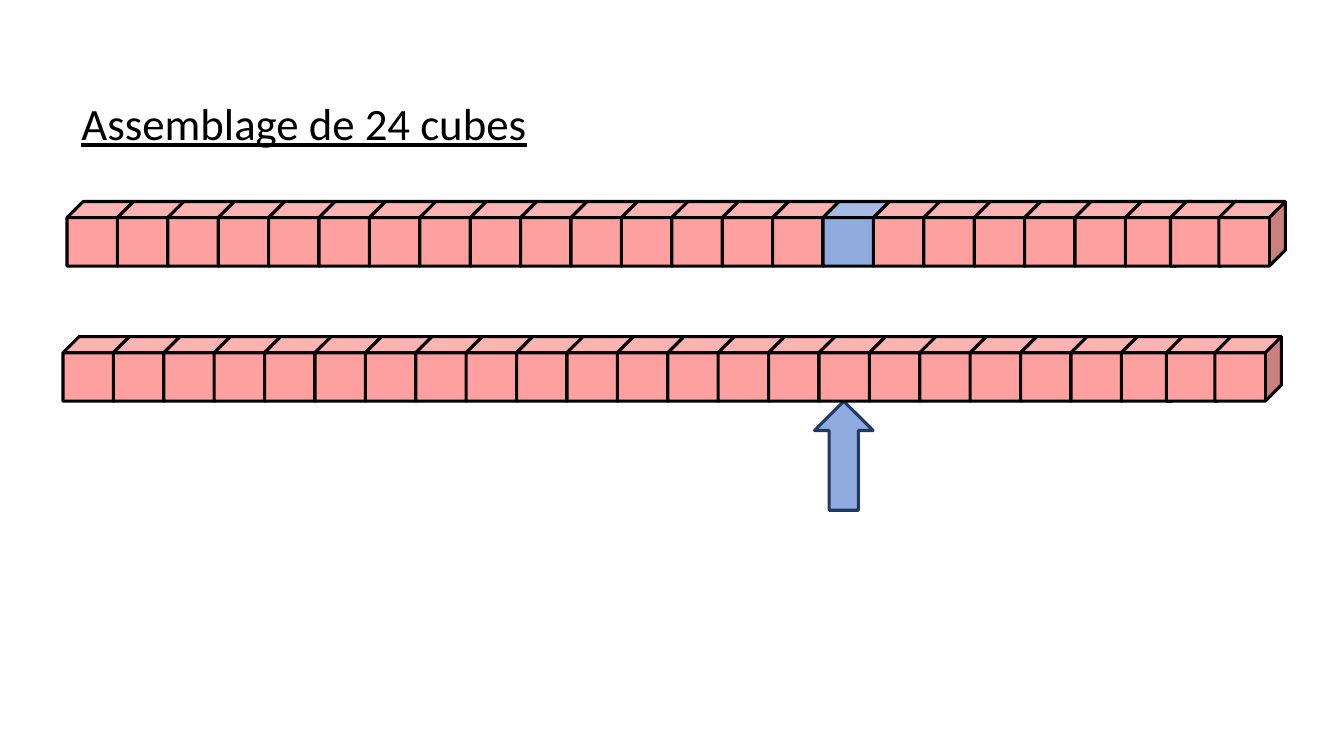
import pptx
import pptx.util
import pptx.dml.color
import pptx.enum.shapes
import pptx.enum.text

Pt = pptx.util.Pt
Shape = pptx.enum.shapes.MSO_SHAPE

PINK = "FEA0A0"
BLUE = "8FAADC"
BLACK = "000000"
NAVY = "203864"

CUBE_SIZE = (47.5, 46.1)
CUBE_OFFSETS = [36 * index for index in range(22)] + [788.2, 822.8]


def color(value):
    return pptx.dml.color.RGBColor.from_string(value)


class CubeSlide:
    title_format = {"name": "Calibri", "size": Pt(32), "underline": True}
    line_width = 2.25

    def __init__(self, presentation):
        self.slide = presentation.slides.add_slide(presentation.slide_layouts[6])

    def title(self, text, left, top, width, height):
        box = self.slide.shapes.add_textbox(Pt(left), Pt(top), Pt(width), Pt(height))
        box.text_frame.word_wrap = True
        box.text_frame.auto_size = pptx.enum.text.MSO_AUTO_SIZE.SHAPE_TO_FIT_TEXT
        run = box.text_frame.paragraphs[0].add_run()
        run.text = text
        run.font.color.rgb = color(BLACK)
        for name, value in self.title_format.items():
            setattr(run.font, name, value)

    def shape(self, shapes, kind, left, top, width, height, fill, line):
        shape = shapes.add_shape(kind, Pt(left), Pt(top), Pt(width), Pt(height))
        shape.shadow.inherit = False
        shape.fill.solid()
        shape.fill.fore_color.rgb = color(fill)
        shape.line.color.rgb = color(line)
        shape.line.width = Pt(self.line_width)

    def arrow(self, left, top, width, height):
        self.shape(self.slide.shapes, Shape.UP_ARROW, left, top, width, height, BLUE, NAVY)

    def cube_row(self, left, top, blue_index=None):
        group = self.slide.shapes.add_group_shape()
        for index, offset in enumerate(CUBE_OFFSETS):
            fill = BLUE if index == blue_index else PINK
            self.shape(group.shapes, Shape.CUBE, left + offset, top, *CUBE_SIZE, fill, BLACK)


def main():
    presentation = pptx.Presentation()
    presentation.slide_width = Pt(960)
    presentation.slide_height = Pt(540)
    page = CubeSlide(presentation)
    page.title("Assemblage de 24 cubes", 51.1, 64.8, 545.8, 46.1)
    page.arrow(581.8, 286.6, 41.8, 77.8)
    page.cube_row(47.9, 144, blue_index=15)
    page.cube_row(45, 240.5)
    presentation.save("out.pptx")


if __name__ == "__main__":
    main()
